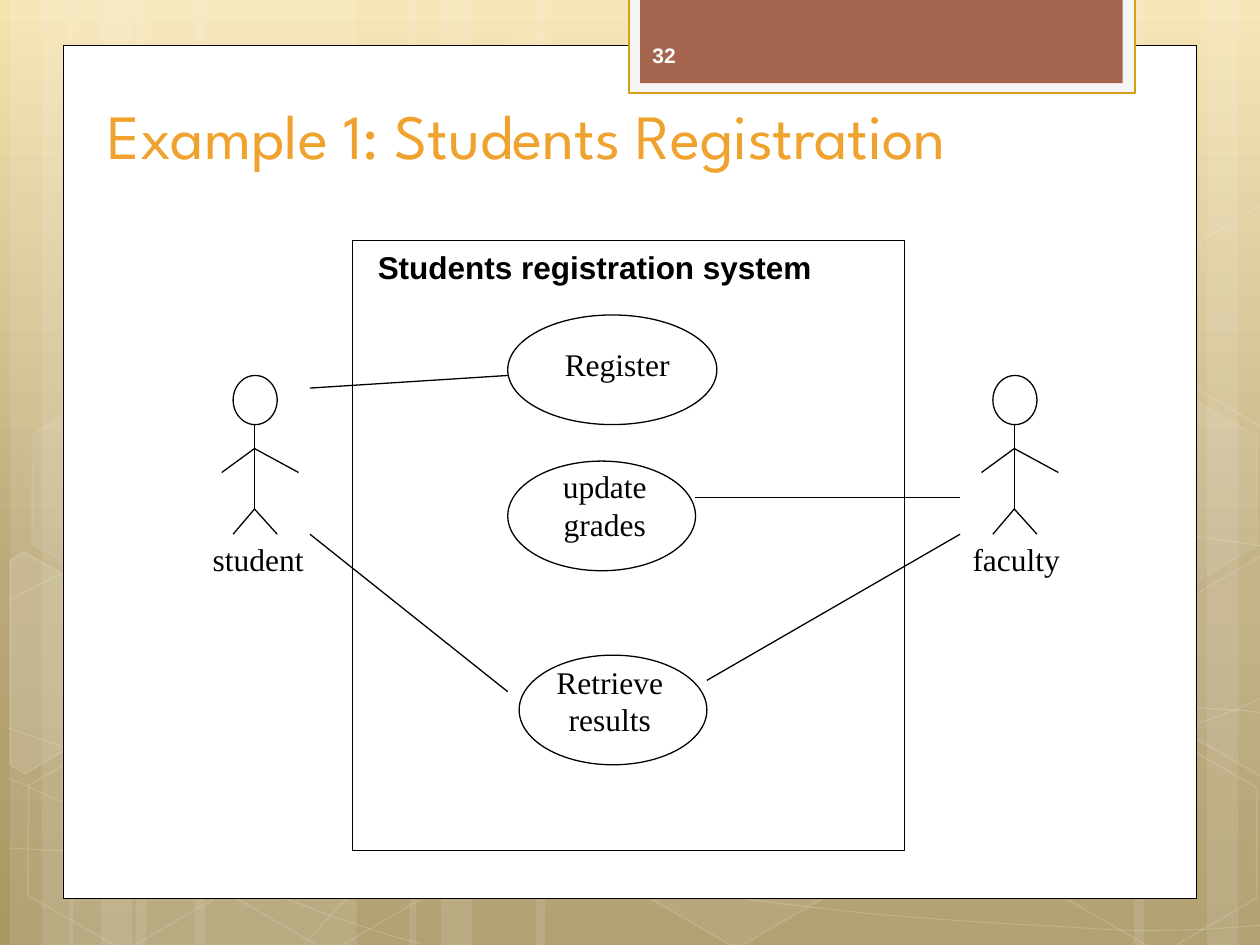
"""Build the student registration use case slide."""
from copy import deepcopy
from typing import NamedTuple, Optional

from lxml import etree
from pptx import Presentation
from pptx.dml.color import RGBColor
from pptx.enum.shapes import MSO_CONNECTOR, MSO_SHAPE
from pptx.enum.text import MSO_ANCHOR, MSO_AUTO_SIZE, PP_ALIGN
from pptx.oxml.ns import qn
from pptx.util import Inches, Pt

RECTANGLE, ELLIPSE, HEXAGON = MSO_SHAPE.RECTANGLE, MSO_SHAPE.OVAL, MSO_SHAPE.HEXAGON
STRAIGHT = MSO_CONNECTOR.STRAIGHT
LEFT, CENTER = PP_ALIGN.LEFT, PP_ALIGN.CENTER
TOP, MIDDLE, BOTTOM = MSO_ANCHOR.TOP, MSO_ANCHOR.MIDDLE, MSO_ANCHOR.BOTTOM
NO_AUTOFIT = MSO_AUTO_SIZE.NONE

COLORS = {
    "sky": "F6E4B0", "sand": "BAA878", "earth": "A99764", "white": "FFFFFF",
    "black": "000000", "tab": "F5F5F5", "gold": "D2A010", "brick": "A5644E",
    "title": "F0A22E", "number": "FEFEFE",
}
Point = tuple[float, float]
Box = tuple[float, float, float, float]


class Paint(NamedTuple):
    fill: Optional[str] = None
    line: Optional[str] = None
    width: float = 0.75
    fill_alpha: int = 100
    line_alpha: int = 100


class Style(NamedTuple):
    font: str = "Times New Roman"
    size: int = 18
    color: str = "black"
    bold: bool = False
    align: PP_ALIGN = LEFT
    anchor: MSO_ANCHOR = TOP


class Hexagon(NamedTuple):
    left: float
    top: float
    fill_alpha: int
    line_alpha: int


class UseCase(NamedTuple):
    oval: Box
    label_box: Box
    label: str


class Actor(NamedTuple):
    center: float
    label: str
    label_width: float


OUTLINE = Paint(line="black")
BANDS = [(1.08, 1.75), (0.08, 0.5), (0.33, 0.83), (1.55, 1.75), (0.55, 0.5), (0.8, 0.83),
         (7.33, 1.75), (9.58, 0.5), (9, 0.83), (4.25, 3.08), (3.25, 0.5), (3.5, 0.83)]
WAVES = [
    [(0.07, 6.73), (0.61, 6.76), (1.15, 6.79), (1.9, 6.78), (2.65, 6.77), (3.58, 6.75),
     (4.58, 6.65), (5.58, 6.55), (7, 6.36), (7.92, 6.17), (8.83, 5.98), (9.77, 5.68),
     (10.07, 5.51)],
    [(0.07, 4.77), (0.36, 4.61), (0.65, 4.46), (1.21, 4.31), (1.78, 4.16), (2.59, 3.94),
     (3.47, 3.87), (4.36, 3.8), (5.44, 3.79), (6.54, 3.87), (7.64, 3.95), (9.47, 4.26),
     (10.07, 4.34)],
    [(0.06, 6.17), (1.27, 6.72), (2.47, 7.27), (3.34, 7.49)],
    [(0.07, 5.78), (0.38, 5.89), (0.7, 6), (1.28, 6.16), (1.86, 6.31), (2.73, 6.56),
     (3.57, 6.73), (4.4, 6.9), (5.45, 7.08), (6.28, 7.18), (7.11, 7.29), (8, 7.33),
     (8.53, 7.36), (9.05, 7.4), (9.19, 7.38), (9.45, 7.38), (9.71, 7.37), (9.89, 7.35),
     (10.07, 7.34)],
    [(2.42, 7.49), (2.6, 7.29), (2.78, 7.09), (3.02, 6.91), (3.26, 6.73), (3.6, 6.53),
     (3.88, 6.39), (4.16, 6.25), (4.33, 6.19), (4.7, 6.09), (5.06, 5.99), (5.73, 5.85),
     (6.08, 5.78), (6.44, 5.71), (6.49, 5.71), (6.8, 5.69), (7.11, 5.66), (7.6, 5.63),
     (7.94, 5.62), (8.29, 5.61), (8.86, 5.62), (8.86, 5.62), (8.86, 5.62), (9.53, 5.62),
     (9.53, 5.62), (9.71, 5.63), (9.88, 5.64), (9.97, 5.65), (10.06, 5.66), (10.03, 5.65),
     (10.06, 5.66)],
]
HEXAGONS = [
    Hexagon(3.34, 0.36, 4, 8), Hexagon(4.97, 5.89, 6, 12), Hexagon(0.11, 5.91, 0, 12),
    Hexagon(0.14, 3.12, 7, 8), Hexagon(1.74, 5.92, 0, 12), Hexagon(7.53, 4.53, 10, 12),
    Hexagon(8.34, 5.93, 0, 12), Hexagon(8.34, 3.14, 7, 8),
]
CUT_HEXAGONS = [
    ([(0.08, 4.45), (0.19, 4.38), (0.96, 4.82), (0.95, 5.7), (0.2, 6.14), (0.08, 6.07)], 10),
    ([(9.26, 4.85), (10.01, 4.41), (10.09, 4.46), (10.09, 6.13), (10.02, 6.17),
      (9.26, 5.73)], 4),
    ([(9.26, 2.07), (10.01, 1.63), (10.1, 1.68), (10.09, 3.35), (10.02, 3.39),
      (9.26, 2.95)], 0),
]
ACTORS = [Actor(2.02, "student", 1.14), Actor(8.05, "faculty", 1.05)]
USE_CASES = [
    UseCase((4.03, 2.5, 1.66, 0.87), (4.17, 2.69, 1.52, 0.59), "Register "),
    UseCase((4.03, 3.66, 1.49, 0.87), (4.12, 3.66, 1.36, 0.81), "update\ngrades"),
    UseCase((4.12, 5.2, 1.49, 0.87), (4.16, 5.21, 1.36, 0.82), "Retrieve results"),
]
ASSOCIATIONS = [((2.46, 3.08), (4.03, 2.98)), ((2.46, 4.24), (4.03, 5.49)),
                ((7.62, 3.95), (5.52, 3.95)), ((7.62, 4.24), (5.61, 5.4))]


def rgb(name: str) -> RGBColor:
    return RGBColor.from_string(COLORS[name])


def apply_paint(shape, paint: Paint) -> None:
    shape.shadow.inherit = False
    alphas = []
    if paint.fill and paint.fill_alpha:
        shape.fill.solid()
        shape.fill.fore_color.rgb = rgb(paint.fill)
        alphas.append(paint.fill_alpha)
    else:
        shape.fill.background()
    if paint.line:
        shape.line.color.rgb = rgb(paint.line)
        shape.line.width = Pt(paint.width)
        alphas.append(paint.line_alpha)
    else:
        shape.line.fill.background()
    for color, alpha in zip(shape._element.spPr.iter(qn("a:srgbClr")), alphas):
        if alpha < 100:
            etree.SubElement(color, qn("a:alpha")).set("val", str(alpha * 1000))


def draw_shape(page, kind: MSO_SHAPE, box: Box, paint: Paint):
    shape = page.shapes.add_shape(kind, *map(Inches, box))
    apply_paint(shape, paint)
    return shape


def draw_path(page, points: list[Point], paint: Paint, closed: bool):
    corners = [(Inches(x), Inches(y)) for x, y in points]
    builder = page.shapes.build_freeform(*corners[0])
    builder.add_line_segments(corners[1:], close=closed)
    shape = builder.convert_to_shape()
    apply_paint(shape, paint)
    return shape


def draw_wave(page, points: list[Point]) -> None:
    shape = draw_path(page, points, Paint(None, "white", 0.5, line_alpha=20), False)
    segments = list(shape._element.spPr.iter(qn("a:lnTo")))
    for first in range(0, len(segments), 3):
        curve = etree.Element(qn("a:cubicBezTo"))
        segments[first].addprevious(curve)
        for segment in segments[first:first + 3]:
            curve.append(segment[0])
            segment.getparent().remove(segment)


def draw_line(page, start: Point, end: Point) -> None:
    line = page.shapes.add_connector(STRAIGHT, *map(Inches, start + end))
    line.line.color.rgb = rgb("black")
    line.line.width = Pt(0.75)
    etree.SubElement(line._element.spPr, qn("a:effectLst"))


def write(box, text: str, style: Style) -> None:
    frame = box.text_frame
    frame.text = text
    frame.word_wrap = True
    frame.auto_size = NO_AUTOFIT
    frame.vertical_anchor = style.anchor
    for para in frame.paragraphs:
        para.alignment = style.align
        para.font.name, para.font.size = style.font, Pt(style.size)
        para.font.bold = style.bold
        para.font.color.rgb = rgb(style.color)


def draw_text(page, box: Box, text: str, style: Style) -> None:
    write(page.shapes.add_textbox(*map(Inches, box)), text, style)


def draw_background(page) -> None:
    fill = page.background.fill
    fill.gradient()
    fill.gradient_angle = 270
    last = list(page._element.iter(qn("a:gs")))[-1]
    last.addnext(deepcopy(last))
    for stop, (position, name) in zip(fill.gradient_stops,
                                      [(0, "sky"), (0.62, "sand"), (1, "earth")]):
        stop.position, stop.color.rgb = position, rgb(name)
    for left, width in BANDS:
        draw_shape(page, RECTANGLE, (left, 0, width, 7.5), Paint("white", fill_alpha=10))
    for wave in WAVES:
        draw_wave(page, wave)
    for item in HEXAGONS:
        paint = Paint("white", "white", 1, item.fill_alpha, item.line_alpha)
        hexagon = draw_shape(page, HEXAGON, (item.left, item.top, 1.75, 1.52), paint)
        hexagon.adjustments[0] = 0.285
        hexagon.rotation = 30
    for points, alpha in CUT_HEXAGONS:
        draw_path(page, points, Paint("white", "white", 1, alpha, 12), True)


def draw_actor(page, actor: Actor) -> None:
    x = actor.center
    neck, shoulder, hip = (x, 3.37), (x, 3.56), (x, 4.04)
    draw_shape(page, ELLIPSE, (x - 0.17, 2.98, 0.35, 0.39), OUTLINE)
    for start, end in [(neck, hip), (shoulder, (x + 0.35, 3.75)), (shoulder, (x - 0.26, 3.75)),
                       (hip, (x + 0.18, 4.24)), (hip, (x - 0.17, 4.24))]:
        draw_line(page, start, end)
    draw_text(page, (x - 0.43, 4.24, actor.label_width, 0.47), actor.label, Style())


def main() -> None:
    deck = Presentation()
    deck.slide_width, deck.slide_height = Inches(10), Inches(7.5)
    page = deck.slides.add_slide(deck.slide_layouts[5])
    draw_background(page)
    draw_shape(page, RECTANGLE, (0.5, 0.36, 9, 6.77), Paint("white", "black", 0.5))
    draw_shape(page, RECTANGLE, (4.99, -0.02, 4.02, 0.76), Paint("tab", "gold", 1.25))
    draw_shape(page, RECTANGLE, (5.08, -0.02, 3.83, 0.68), Paint("brick"))
    title = page.shapes.title
    title.left, title.top, title.width, title.height = map(Inches, (0.75, 0.5, 8.42, 0.92))
    write(title, "Example 1: Students Registration",
          Style("League Spartan", 36, "title", anchor=BOTTOM))
    page.shapes._spTree.append(title._element)
    draw_text(page, (5.08, 0.24, 1.46, 0.4), "32",
              Style("Arial", 12, "number", True, anchor=MIDDLE))
    for actor in ACTORS:
        draw_actor(page, actor)
    for case in USE_CASES:
        draw_shape(page, ELLIPSE, case.oval, OUTLINE)
        draw_text(page, case.label_box, case.label, Style(align=CENTER))
    for start, end in ASSOCIATIONS:
        draw_line(page, start, end)
    draw_shape(page, RECTANGLE, (2.8, 1.91, 4.38, 4.84), OUTLINE)
    draw_text(page, (2.9, 1.92, 4.2, 0.47), "Students registration system",
              Style("Arial", bold=True))
    deck.save("out.pptx")


if __name__ == "__main__":
    main()
